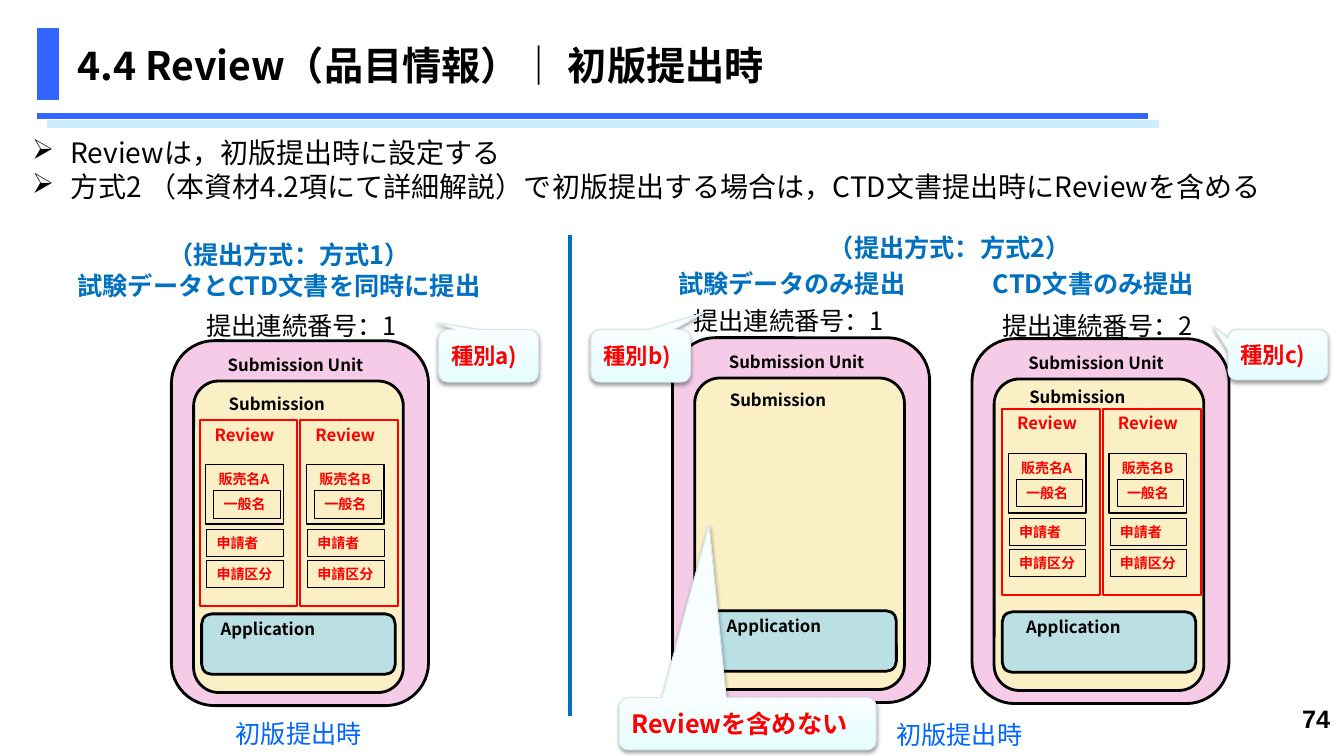
from lxml import etree
from pptx import Presentation, util as u
from pptx.dml.color import RGBColor
from pptx.enum import shapes, text
from pptx.oxml import ns

BLACK = RGBColor(0x00, 0x00, 0x00)
RED = RGBColor(0xFF, 0x00, 0x00)
BLUE = RGBColor(0x33, 0x66, 0xFF)
PALE_BLUE = RGBColor(0xCC, 0xEC, 0xFF)
HEADING_BLUE = RGBColor(0x00, 0x70, 0xC0)
CAPTION_BLUE = RGBColor(0x00, 0x66, 0xFF)
PINK = RGBColor(0xF5, 0xCB, 0xE8)
CREAM = RGBColor(0xFB, 0xEF, 0xC5)
TEAL = RGBColor(0xBB, 0xE0, 0xE3)
CALLOUT_EDGE = RGBColor(0xD5, 0xE8, 0xEA)
CALLOUT_STOPS = [(0, "E6FDFF"), (35, "ECFDFF"), (100, "F8FEFF")]

LEFT, CENTER = text.PP_ALIGN.LEFT, text.PP_ALIGN.CENTER
RIGHT, JUSTIFY = text.PP_ALIGN.RIGHT, text.PP_ALIGN.JUSTIFY
TOP, MIDDLE = text.MSO_ANCHOR.TOP, text.MSO_ANCHOR.MIDDLE
RECT = shapes.MSO_SHAPE.RECTANGLE
ROUND = shapes.MSO_SHAPE.ROUNDED_RECTANGLE
CALLOUT = shapes.MSO_SHAPE.ROUNDED_RECTANGULAR_CALLOUT


def add_xml(parent, tag, **values):
    child = etree.SubElement(parent, ns.qn(tag))
    for key, value in values.items():
        child.set(key, str(value))
    return child


class SlideBuilder:
    font_name = "Noto Sans CJK JP"

    def __init__(self, page):
        self.page = page

    def fill_text(self, box, lines, size, color, bold=True, align=LEFT, anchor=TOP,
                  font=font_name, frame_format=None):
        frame = box.text_frame
        frame_values = {"word_wrap": True, "vertical_anchor": anchor, **(frame_format or {})}
        for key, value in frame_values.items():
            setattr(frame, key, value)
        for index, line in enumerate(lines.split("\n")):
            para = frame.add_paragraph() if index else frame.paragraphs[0]
            para.alignment = align
            span = para.add_run()
            span.text = line
            for key, value in {"name": font, "size": u.Pt(size), "bold": bold}.items():
                setattr(span.font, key, value)
            span.font.color.rgb = color
            add_xml(span.font._element, "a:ea", typeface=font)

    def label(self, x, y, width, height, lines, size, color, **style):
        box = self.page.shapes.add_textbox(*map(u.Inches, (x, y, width, height)))
        self.fill_text(box, lines, size, color, **style)
        return box

    def bullets(self, x, y, width, height, lines, size, color):
        box = self.label(x, y, width, height, lines, size, color, bold=False)
        for para in box.text_frame.paragraphs:
            props = para._p.get_or_add_pPr()
            props.set("marL", str(u.Inches(0.38)))
            props.set("indent", str(u.Inches(-0.38)))
            add_xml(props, "a:buChar", char="➢")

    def shape(self, kind, x, y, width, height, fill, edge, weight, adjust=()):
        box = self.page.shapes.add_shape(kind, *map(u.Inches, (x, y, width, height)))
        box.shadow.inherit = False
        for index, value in enumerate(adjust):
            box.adjustments[index] = value
        if fill is None:
            box.fill.background()
        else:
            box.fill.solid()
            box.fill.fore_color.rgb = fill
        box.line.color.rgb = edge
        box.line.width = u.Pt(weight)
        return box

    def field(self, x, y, width, words):
        box = self.shape(RECT, x, y, width, 0.27, None, BLACK, 0.75)
        self.fill_text(box, words, 10, RED, frame_format={"margin_right": 0})

    def line(self, x1, y1, x2, y2, color, weight):
        line = self.page.shapes.add_connector(
            shapes.MSO_CONNECTOR.STRAIGHT, *map(u.Inches, (x1, y1, x2, y2)))
        line.line.color.rgb = color
        line.line.width = u.Pt(weight)
        add_xml(line._element.spPr, "a:effectLst")

    def callout(self, x, y, width, height, words, size, tip):
        box = self.shape(CALLOUT, x, y, width, height, None, CALLOUT_EDGE, 0.75, (*tip, 0.17))
        props = box._element.spPr
        gradient = etree.Element(ns.qn("a:gradFill"))
        stops = add_xml(gradient, "a:gsLst")
        for position, color in CALLOUT_STOPS:
            add_xml(add_xml(stops, "a:gs", pos=position * 1000), "a:srgbClr", val=color)
        add_xml(gradient, "a:lin", ang=270 * 60000, scaled=1)
        props.replace(props.find(ns.qn("a:noFill")), gradient)
        shadow = add_xml(props.find(ns.qn("a:effectLst")), "a:outerShdw", blurRad=u.Pt(3.1),
                         dist=u.Pt(1.6), dir=90 * 60000, rotWithShape=0)
        add_xml(add_xml(shadow, "a:srgbClr", val="000000"), "a:alpha", val=38000)
        self.fill_text(box, words, size, RED, align=JUSTIFY, anchor=MIDDLE)

    def unit(self, x, y, submission_y, application_x):
        self.shape(ROUND, x, y, 2.55, 3.62, PINK, BLACK, 2)
        self.shape(ROUND, x + 0.22, y + 0.4, 2.08, 3.09, CREAM, BLACK, 2, (0.12,))
        self.label(x + 0.46, y + 0.09, 1.68, 0.3, "Submission Unit", 12, BLACK)
        self.label(x + 0.47, y + submission_y, 1.35, 0.3, "Submission", 12, BLACK)
        self.shape(ROUND, x + 0.3, y + 2.71, 1.92, 0.6, TEAL, BLACK, 2)
        self.label(x + application_x, y + 2.71, 1.33, 0.3, "Application", 12, BLACK)

    def review(self, x, y, product):
        self.label(x + 0.05, y - 0.01, 1.04, 0.3, "Review", 12, RED)
        self.shape(RECT, x, y, 0.97, 1.84, None, RED, 1.5)
        self.shape(RECT, x + 0.06, y + 0.44, 0.77, 0.59, None, BLACK, 1)
        self.label(x + 0.09, y + 0.45, 0.77, 0.27, product, 10, RED,
                   frame_format={"margin_right": 0})
        self.field(x + 0.14, y + 0.7, 0.66, "一般名")
        self.field(x + 0.07, y + 1.08, 0.76, "申請者")
        self.field(x + 0.07, y + 1.39, 0.76, "申請区分")


def main():
    deck = Presentation()
    deck.slide_width, deck.slide_height = u.Inches(13.33), u.Inches(7.5)
    slide = SlideBuilder(deck.slides.add_slide(deck.slide_layouts[6]))

    slide.line(11.39, 1.15, 0.37, 1.15, BLUE, 4.5)
    slide.shape(RECT, 0.37, 0.28, 0.21, 0.71, BLUE, BLUE, 0.75)
    slide.line(11.5, 1.23, 0.47, 1.23, PALE_BLUE, 6)
    slide.label(0.67, 0.21, 12, 0.87, "4.4 Review（品目情報）｜ 初版提出時", 28, BLACK,
                anchor=MIDDLE)
    slide.label(12.01, 6.93, 1.28, 0.52, "74", 18, BLACK, align=RIGHT, font="Arial")
    slide.bullets(0.22, 1.3, 12.9, 0.77,
                  "Reviewは，初版提出時に設定する\n"
                  "方式2 （本資材4.2項にて詳細解説）で初版提出する場合は，"
                  "CTD文書提出時にReviewを含める", 20, BLACK)

    slide.label(0.67, 2.33, 4.39, 0.4, "（提出方式：方式1）", 18, HEADING_BLUE, align=CENTER)
    slide.label(6.84, 2.26, 5.16, 0.4, "（提出方式：方式2）", 18, HEADING_BLUE, align=CENTER)
    for x, y, width, heading in [(0.67, 2.63, 4.39, "試験データとCTD文書を同時に提出"),
                                 (6.63, 2.61, 2.8, "試験データのみ提出"),
                                 (9.75, 2.61, 2.6, "CTD文書のみ提出")]:
        slide.label(x, y, width, 0.4, heading, 18, HEADING_BLUE)

    for x, y, submission_y, application_x in [(1.7, 3.38, 0.48, 0.39),
                                              (6.67, 3.35, 0.47, 0.44),
                                              (9.64, 3.36, 0.43, 0.44)]:
        slide.unit(x, y, submission_y, application_x)
    for x, y in [(1.98, 4.17), (9.94, 4.06)]:
        for index, product in enumerate(["販売名A", "販売名B"]):
            slide.review(x + index, y, product)

    for x, y in [(2.24, 7.08), (8.79, 7.09)]:
        slide.label(x, y, 1.65, 0.4, "初版提出時", 18, CAPTION_BLUE, bold=False)
    slide.callout(6.14, 6.92, 2.55, 0.52, "Reviewを含めない", 18, (-0.15, -3.8))
    for x, y, number in [(1.95, 3.03, 1), (6.78, 2.98, 1), (9.84, 3.03, 2)]:
        slide.label(x, y, 2.22, 0.4, f"提出連続番号：{number}", 18, BLACK, bold=False)
    slide.line(5.65, 2.33, 5.65, 7.1, HEADING_BLUE, 3)
    for x, height, letter, tip in [(4.35, 0.52, "a", (-0.52, -0.63)),
                                   (5.86, 0.52, "b", (0.64, -0.83)),
                                   (12.18, 0.5, "c", (-0.65, -0.56))]:
        slide.callout(x, 3.27, 0.99, height, f"種別{letter})", 16, tip)

    deck.save("out.pptx")


if __name__ == "__main__":
    main()
